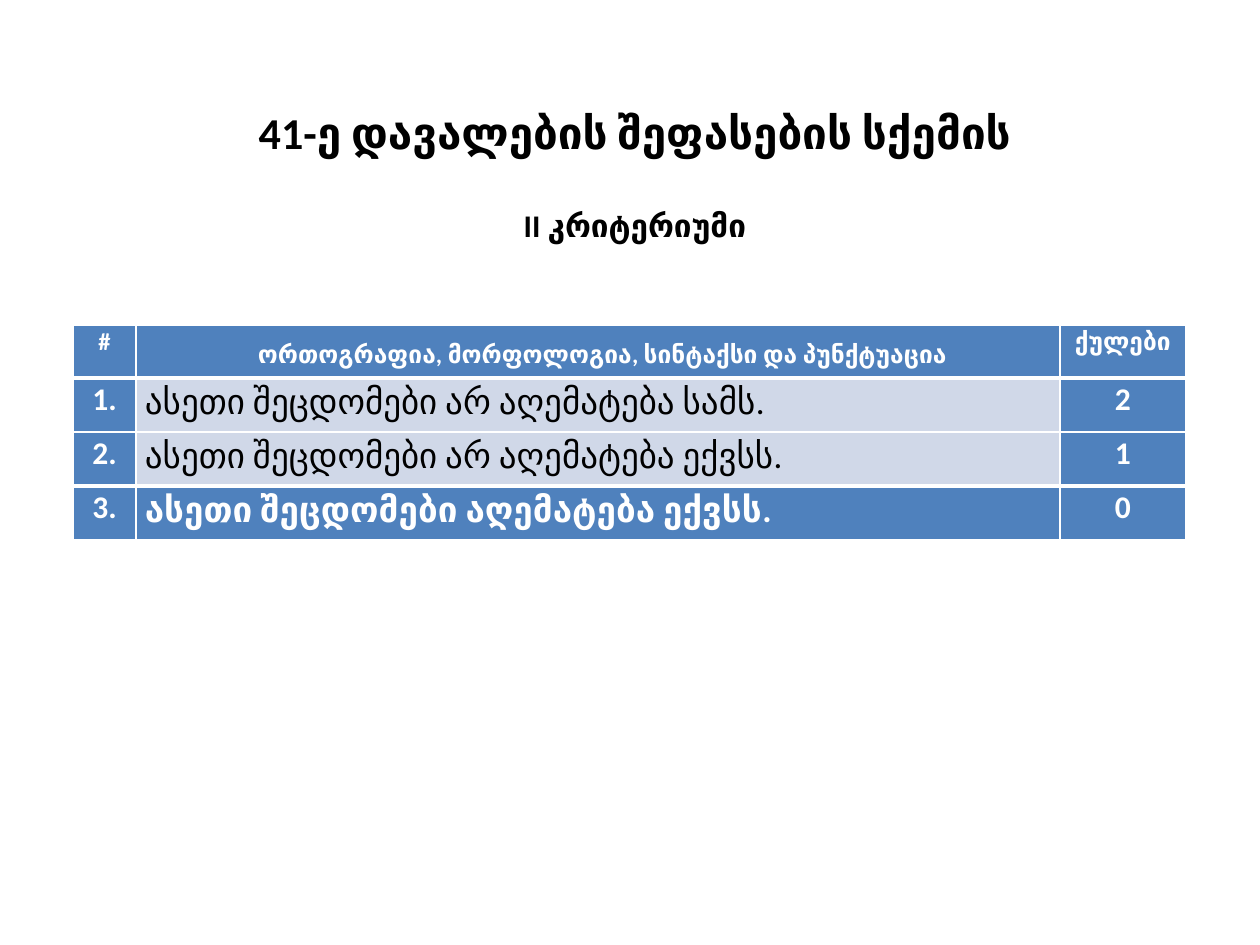
from lxml.etree import SubElement
from pptx import Presentation
from pptx.dml.color import RGBColor
from pptx.enum.text import MSO_ANCHOR as Anchor, MSO_AUTO_SIZE as Fit, PP_ALIGN as Align
from pptx.oxml.ns import qn
from pptx.util import Pt

PX = 914400 // 126
WHITE, BLACK, BLUE, PALE = "FFFFFF", "000000", "4F81BD", "D0D8E8"
HEADS = ["#", "ორთოგრაფია, მორფოლოგია, სინტაქსი და პუნქტუაცია", "ქულები"]
RULES = [
    ["1.", "ასეთი შეცდომები არ აღემატება სამს.", "2"],
    ["2.", "ასეთი შეცდომები არ აღემატება ექვსს.", "1"],
    ["3.", "ასეთი შეცდომები აღემატება ექვსს.", "0"],
]
COLS = [63, 924, 126]
ROWS = [53, 54, 54, 54]


def px(n):
    return n * PX


def rgb(code):
    return RGBColor.from_string(code)


def style(para, size, color, bold=True, align=Align.CENTER):
    para.alignment = align
    for run in para.runs:
        font = run.font
        font.name, font.size, font.bold = "Calibri", Pt(size), bold
        font.color.rgb = rgb(color)


def place(shape, left, top, width, height):
    shape.left, shape.top = px(left), px(top)
    shape.width, shape.height = px(width), px(height)


def add_title(slide):
    title = slide.shapes.title
    place(title, 63, 136, 1144, 157)
    frame = title.text_frame
    frame.auto_size = Fit.NONE
    frame.word_wrap = True
    frame.vertical_anchor = Anchor.MIDDLE
    frame.margin_bottom = px(86)
    frame.text = "41-ე დავალების შეფასების სქემის\nII კრიტერიუმი"
    head, sub = frame.paragraphs
    style(head, 25.2, BLACK)
    style(sub, 18, BLACK)
    sub.space_before = Pt(27)


def edge(cell, top, bottom):
    """Draw white cell borders; top and bottom widths are in points."""
    props = cell._tc.get_or_add_tcPr()
    for side, width in zip("LRTB", (1, 1, top, bottom)):
        line = SubElement(props, qn(f"a:ln{side}"), w=str(Pt(width)))
        fill = SubElement(line, qn("a:solidFill"))
        SubElement(fill, qn("a:srgbClr"), val=WHITE)


def fill_cell(cell, text, row, col):
    last = len(RULES)
    body = row > 0 and col == 1
    plain = body and row < last
    edge(cell, 3 if row in (1, last) else 1, 3 if row in (0, last - 1) else 1)
    cell.fill.solid()
    cell.fill.fore_color.rgb = rgb(PALE if plain else BLUE)
    cell.margin_left = cell.margin_right = px(9)
    cell.margin_top = cell.margin_bottom = 0
    cell.text_frame.text = text
    para = cell.text_frame.paragraphs[0]
    para.line_spacing = 1.07
    size = 14 if row == 0 else 20 if body else 18
    style(para, size, BLACK if plain else WHITE, not plain,
          Align.JUSTIFY if body else Align.CENTER)
    if row == 0 and col == 1:
        para.line_spacing = 1.5
        para._p.get_or_add_pPr().set("marL", str(px(9)))


def add_scores(slide):
    grid = [HEADS] + RULES
    table = slide.shapes.add_table(len(ROWS), len(COLS), px(73), px(325),
                                   px(sum(COLS)), px(sum(ROWS))).table
    for col, width in zip(table.columns, COLS):
        col.width = px(width)
    for row, height in zip(table.rows, ROWS):
        row.height = px(height)
    for r, texts in enumerate(grid):
        for c, text in enumerate(texts):
            fill_cell(table.cell(r, c), text, r, c)


def main():
    deck = Presentation()
    deck.slide_width, deck.slide_height = px(1260), px(945)
    slide = deck.slides.add_slide(deck.slide_layouts[5])
    add_title(slide)
    add_scores(slide)
    deck.save("out.pptx")


if __name__ == "__main__":
    main()
